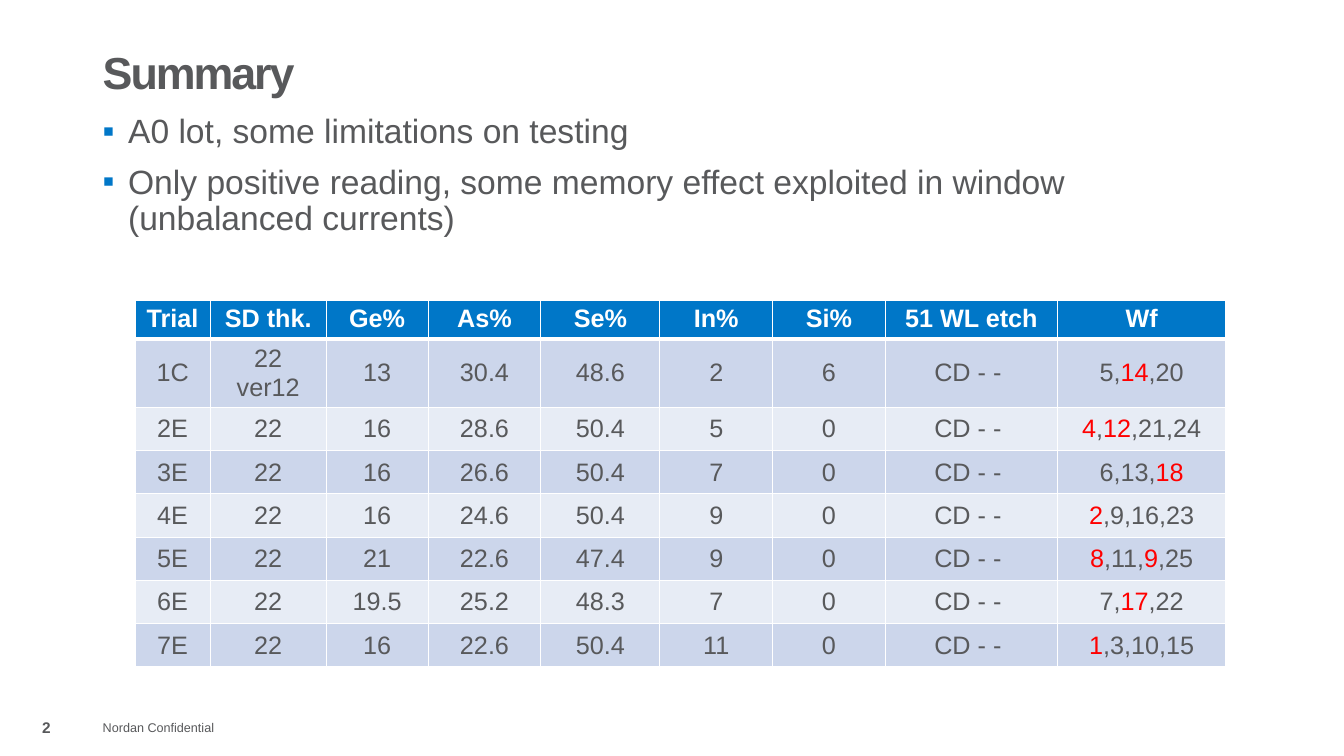
"""Build a summary slide with two bullets and a table of trials."""
import pptx
import pptx.dml.color
import pptx.enum.text
import pptx.oxml
import pptx.oxml.ns
import pptx.util

Cm = pptx.util.Cm
Pt = pptx.util.Pt
MID = pptx.enum.text.MSO_ANCHOR.MIDDLE
TOP = pptx.enum.text.MSO_ANCHOR.TOP
LEFT = pptx.enum.text.PP_ALIGN.LEFT
MID_TEXT = pptx.enum.text.PP_ALIGN.CENTER

HUES = {"text": "58595B", "blue": "0077C8", "white": "FFFFFF", "red": "FF0000",
        "dark": "CCD6EB", "light": "E7ECF5"}
NS = pptx.oxml.ns.nsdecls("a")

HEAD = ["Trial", "SD thk.", "Ge%", "As%", "Se%", "In%", "Si%", "51 WL etch", "Wf"]
TRIALS = [
    ["1C", "22 ver12", "13", "30.4", "48.6", "2", "6", "5,*14*,20"],
    ["2E", "22", "16", "28.6", "50.4", "5", "0", "*4*,*12*,21,24"],
    ["3E", "22", "16", "26.6", "50.4", "7", "0", "6,13,*18*"],
    ["4E", "22", "16", "24.6", "50.4", "9", "0", "*2*,9,16,23"],
    ["5E", "22", "21", "22.6", "47.4", "9", "0", "*8*,11,*9*,25"],
    ["6E", "22", "19.5", "25.2", "48.3", "7", "0", "7,*17*,22"],
    ["7E", "22", "16", "22.6", "50.4", "11", "0", "*1*,3,10,15"],
]
ETCH = "CD - - "
WIDTHS = [1.9, 2.92, 2.57, 2.84, 3, 2.84, 2.84, 4.34, 4.24]
HEIGHTS = [0.97, 1.04] + [1.09] * 6


def assign(target, values):
    for name, value in values.items():
        setattr(target, name, value)


class Deck:
    def __init__(self):
        self.show = pptx.Presentation()
        assign(self.show, {"slide_width": Cm(33.87), "slide_height": Cm(19.05)})
        self.slide = self.show.slides.add_slide(self.show.slide_layouts[6])

    def words(self, para, text, size, hue="text", bold=False, track=0):
        for i, part in enumerate(text.split("*")):
            if part:
                run = para.add_run()
                run.text = part
                assign(run.font, {"name": "Arial", "size": Pt(size), "bold": bold})
                shade = HUES["red" if i % 2 else hue]
                run.font.color.rgb = pptx.dml.color.RGBColor.from_string(shade)
                if track:
                    run.font._element.set("spc", str(track))

    def box(self, spot, lines, size, anchor=MID, align=LEFT, space=1.0,
            bullet=False, **style):
        frame = self.slide.shapes.add_textbox(*map(Cm, spot)).text_frame
        assign(frame, {"word_wrap": True, "vertical_anchor": anchor})
        for i, line in enumerate(lines):
            para = frame.add_paragraph() if i else frame.paragraphs[0]
            if bullet:
                self.mark(para)
            assign(para, {"alignment": align, "line_spacing": space,
                          "space_before": Pt(10 if i else 0)})
            self.words(para, line, size, **style)

    def mark(self, para):
        props = para._p.get_or_add_pPr()
        props.set("marL", str(Cm(0.64)))
        props.set("indent", str(-Cm(0.64)))
        for xml in (f'<a:buClr {NS}><a:srgbClr val="{HUES["blue"]}"/></a:buClr>',
                    f'<a:buFont {NS} typeface="Arial"/>',
                    f'<a:buChar {NS} char="▪"/>'):
            props.append(pptx.oxml.parse_xml(xml))

    def edge(self, cell, row):
        props = cell._tc.get_or_add_tcPr()
        wide = {0: "B", 1: "T"}.get(row)
        for i, side in enumerate("LRTB"):
            width = Pt(3 if side == wide else 1)
            props.insert(i, pptx.oxml.parse_xml(
                f'<a:ln{side} {NS} w="{width}"><a:solidFill>'
                f'<a:srgbClr val="{HUES["white"]}"/></a:solidFill></a:ln{side}>'))

    def table(self, left, top, rows):
        size = Cm(sum(WIDTHS)), Cm(sum(HEIGHTS))
        grid = self.slide.shapes.add_table(
            len(rows), len(WIDTHS), Cm(left), Cm(top), *size).table
        for col, width in zip(grid.columns, WIDTHS):
            col.width = Cm(width)
        for r, row in enumerate(rows):
            grid.rows[r].height = Cm(HEIGHTS[r])
            fill = ("dark" if r % 2 else "light") if r else "blue"
            for c, text in enumerate(row):
                cell = grid.cell(r, c)
                assign(cell, {"margin_top": Cm(0.1), "margin_bottom": Cm(0.1),
                              "vertical_anchor": MID if r else TOP})
                cell.fill.solid()
                cell.fill.fore_color.rgb = pptx.dml.color.RGBColor.from_string(HUES[fill])
                self.edge(cell, r)
                para = cell.text_frame.paragraphs[0]
                para.alignment = MID_TEXT
                self.words(para, text, 18, "text" if r else "white", not r)


def main():
    deck = Deck()
    deck.box((2.34, 1.02, 29.21, 1.75), ["Summary"], 32, space=0.9, bold=True, track=-150)
    deck.box((2.34, 2.77, 29.21, 13.13),
             ["A0 lot, some limitations on testing",
              "Only positive reading, some memory effect exploited in window "
              "(unbalanced currents)"],
             24, anchor=TOP, space=0.9, bullet=True)
    deck.box((2.34, 17.81, 3.86, 1.02), ["Nordan Confidential"], 9)
    deck.box((0, 17.81, 2.34, 1.02), ["2"], 11, align=MID_TEXT, bold=True)
    deck.table(3.4, 7.57, [HEAD] + [[*row[:-1], ETCH, row[-1]] for row in TRIALS])
    deck.show.save("out.pptx")


if __name__ == "__main__":
    main()
